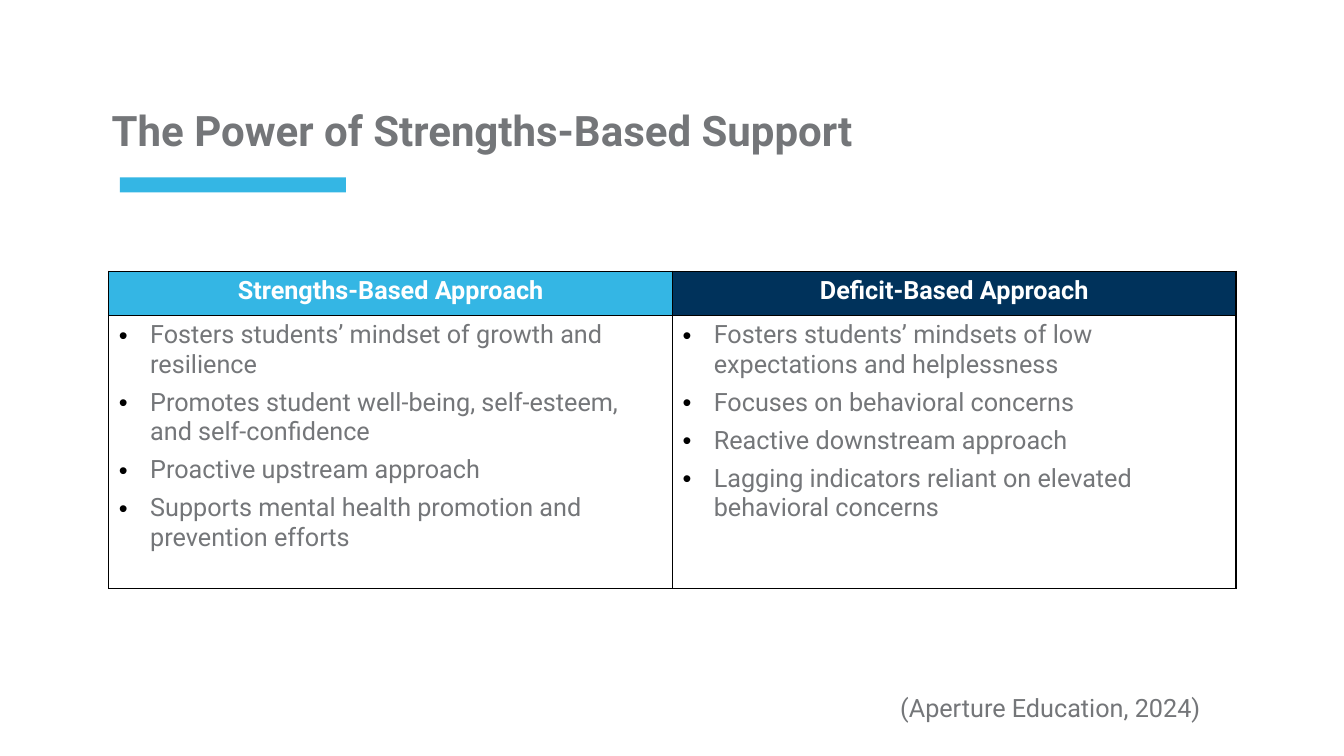
from pptx import Presentation
from pptx.util import Inches, Pt
from pptx.dml.color import RGBColor as Rgb
from pptx.enum.shapes import MSO_SHAPE as Kind
from pptx.enum.text import MSO_ANCHOR as Anchor, PP_ALIGN as Align
from lxml.etree import SubElement as Sub
from pptx.oxml.ns import qn

HUES = {"sky": "34B6E4", "navy": "00325B", "gray": "747679",
        "white": "FFFFFF", "black": "000000"}
TITLE = {"name": "Roboto", "size": Pt(30), "bold": True}
HEAD = {"name": "Roboto", "size": Pt(18), "bold": True}
BODY = {"name": "Roboto", "size": Pt(18), "bold": False}
SIDES = [
    ("Strengths-Based Approach", "sky", [
        "Fosters students’ mindset of growth and resilience",
        "Promotes student well-being, self-esteem, and self-confidence",
        "Proactive upstream approach",
        "Supports mental health promotion and prevention efforts"]),
    ("Deficit-Based Approach", "navy", [
        "Fosters students’ mindsets of low expectations and helplessness",
        "Focuses on behavioral concerns",
        "Reactive downstream approach",
        "Lagging indicators reliant on elevated behavioral concerns"]),
]


def write(para, text, form, hue):
    run = para.add_run()
    run.text = text
    for key, val in form.items():
        setattr(run.font, key, val)
    run.font.color.rgb = Rgb.from_string(HUES[hue])


def add_box(x, y, w, h, text, form):
    frame = slide.shapes.add_textbox(
        Inches(x), Inches(y), Inches(w), Inches(h)).text_frame
    frame.word_wrap = True
    write(frame.paragraphs[0], text, form, "gray")
    return frame


deck = Presentation()
deck.slide_width, deck.slide_height = Inches(13.33), Inches(7.5)
slide = deck.slides.add_slide(deck.slide_layouts[6])

# Accent bar
bar = slide.shapes.add_shape(
    Kind.RECTANGLE, Inches(1.19), Inches(1.76), Inches(2.24), Inches(0.15))
bar.shadow.inherit = False
bar.fill.solid()
bar.fill.fore_color.rgb = Rgb.from_string(HUES["sky"])
bar.line.fill.background()

# Title
title = add_box(1.01, 0.92, 11.32, 0.72,
                "The Power of Strengths-Based Support", TITLE)
title.vertical_anchor = Anchor.BOTTOM
for edge in ("left", "top", "right", "bottom"):
    setattr(title, f"margin_{edge}", Inches(0.1))

# Table grid
grid = slide.shapes.add_table(
    2, 2, Inches(1.08), Inches(2.69), Inches(11.18), Inches(3.15)).table
grid.horz_banding = False
for col in grid.columns:
    col.width = Inches(5.59)
for row, tall in zip(grid.rows, (0.44, 2.71)):
    row.height = Inches(tall)

# Cell borders
for cell in grid.iter_cells():
    props = cell._tc.get_or_add_tcPr()
    for edge in "LRTB":
        line = Sub(props, qn(f"a:ln{edge}"), w=str(Pt(1)))
        Sub(Sub(line, qn("a:solidFill")), qn("a:srgbClr"), val=HUES["black"])

# Headings and bullet lists
for i, (name, hue, points) in enumerate(SIDES):
    head, body = grid.cell(0, i), grid.cell(1, i)
    head.fill.solid()
    head.fill.fore_color.rgb = Rgb.from_string(HUES[hue])
    body.fill.background()
    para = head.text_frame.paragraphs[0]
    para.alignment = Align.CENTER
    write(para, name, HEAD, "white")
    for j, point in enumerate(points):
        frame = body.text_frame
        para = frame.add_paragraph() if j else frame.paragraphs[0]
        props = para._p.get_or_add_pPr()
        props.set("marL", str(Inches(0.31)))
        props.set("indent", str(-Inches(0.31)))
        Sub(Sub(props, qn("a:buClr")), qn("a:srgbClr"), val=HUES["black"])
        Sub(props, qn("a:buFont"), typeface="Arial")
        Sub(props, qn("a:buChar"), char="•")
        para.space_after = Pt(6)
        write(para, point, BODY, "gray")

# Citation
add_box(8.83, 6.82, 3.42, 0.4, "(Aperture Education, 2024)", BODY)

deck.save("out.pptx")
